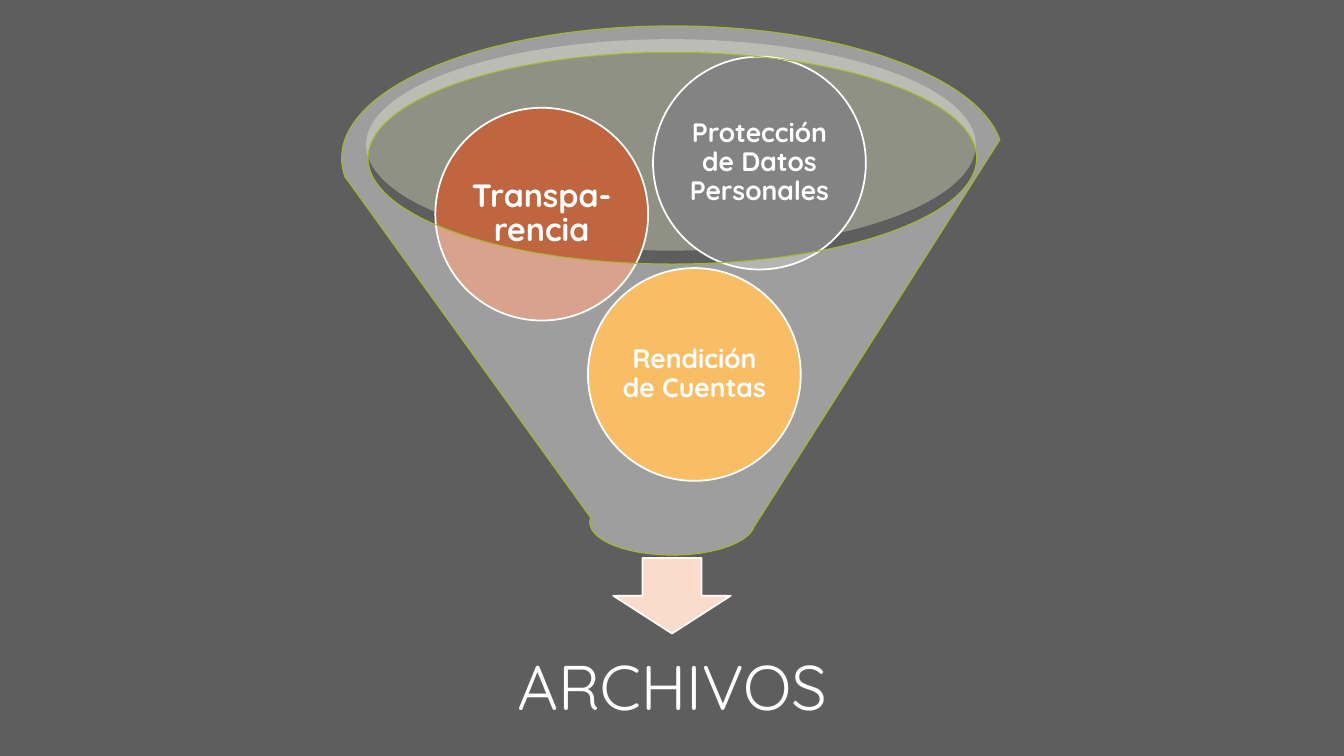
from dataclasses import dataclass

from lxml import etree
from pptx import Presentation
from pptx.dml.color import RGBColor
from pptx.enum import shapes, text
from pptx.oxml.ns import qn
from pptx.util import Pt

KIND = shapes.MSO_SHAPE


@dataclass(frozen=True)
class Theme:
    """Colours, font and type sizes of the slide."""
    back: str = "5E5E5E"
    white: str = "FFFFFF"
    rim: str = "D8DFBE"
    edge: str = "A6B727"
    arrow: str = "FBDCCC"
    amber: str = "F69200"
    rust: str = "BF6540"
    grey: str = "838383"
    font: str = "Quicksand"
    title: int = 45
    large: int = 23
    small: int = 19


class Deck:
    """Draws styled elements on the current slide."""

    def __init__(self, theme):
        self.theme = theme
        self.prs = Presentation()
        self.prs.slide_width, self.prs.slide_height = Pt(960), Pt(540)
        self.slide = self.prs.slides.add_slide(self.prs.slide_layouts[6])
        self.paint(self.slide.background.fill, theme.back)

    def paint(self, fill, color, alpha=None):
        """Fill with a colour, see-through if alpha is given in percent."""
        fill.solid()
        fill.fore_color.rgb = RGBColor.from_string(color)
        if alpha is not None:
            node = fill._xPr.find(qn("a:solidFill"))[0]
            etree.SubElement(node, qn("a:alpha")).set("val", str(alpha * 1000))

    def shape(self, kind, box, color, alpha=None, line=None, width=1.25):
        """Add a preset shape."""
        item = self.slide.shapes.add_shape(kind, *map(Pt, box))
        item.shadow.inherit = False
        self.paint(item.fill, color, alpha)
        if line:
            self.paint(item.line.fill, line)
            item.line.width = Pt(width)
        else:
            item.line.fill.background()
        return item

    def letter(self, frame, words, size, inset, bold=False):
        """Put one centred run of text in a frame."""
        frame.word_wrap = True
        frame.vertical_anchor = text.MSO_ANCHOR.MIDDLE
        frame.margin_left = frame.margin_right = Pt(inset)
        frame.margin_top = frame.margin_bottom = Pt(inset)
        para = frame.paragraphs[0]
        para.alignment = text.PP_ALIGN.CENTER
        para.line_spacing = 0.9
        run = para.add_run()
        run.text = words
        run.font.name, run.font.size, run.font.bold = self.theme.font, Pt(size), bold
        run.font.color.rgb = RGBColor.from_string(self.theme.white)

    def ball(self, left, top, color, words, size):
        """Add a labelled circle."""
        item = self.shape(KIND.OVAL, (left, top, 152, 152), color, line=self.theme.white)
        self.letter(item.text_frame, words, size, 2, True)

    def label(self, box, words, size):
        """Add a text box."""
        item = self.slide.shapes.add_textbox(*map(Pt, box))
        self.letter(item.text_frame, words, size, 25)


def main():
    """Build and save the funnel slide."""
    look = Theme()
    deck = Deck(look)
    deck.shape(KIND.OVAL, (261.5, 28, 435.5, 151), look.rim, 40)
    deck.shape(KIND.DOWN_ARROW, (438, 398.5, 84, 54), look.arrow, line=look.white)
    deck.label((277.5, 442, 405, 101.5), "ARCHIVOS", look.title)
    for ball in (
        (420, 191.5, look.amber, "Rendición de Cuentas", look.small),
        (311, 77, look.rust, "Transpa-rencia", look.large),
        (466.5, 40.5, look.grey, "Protección de Datos Personales", look.small),
    ):
        deck.ball(*ball)
    deck.shape(KIND.FUNNEL, (244, 18.5, 472.5, 378), look.white, 40, look.edge, 0.75)
    deck.prs.save("out.pptx")


if __name__ == "__main__":
    main()
